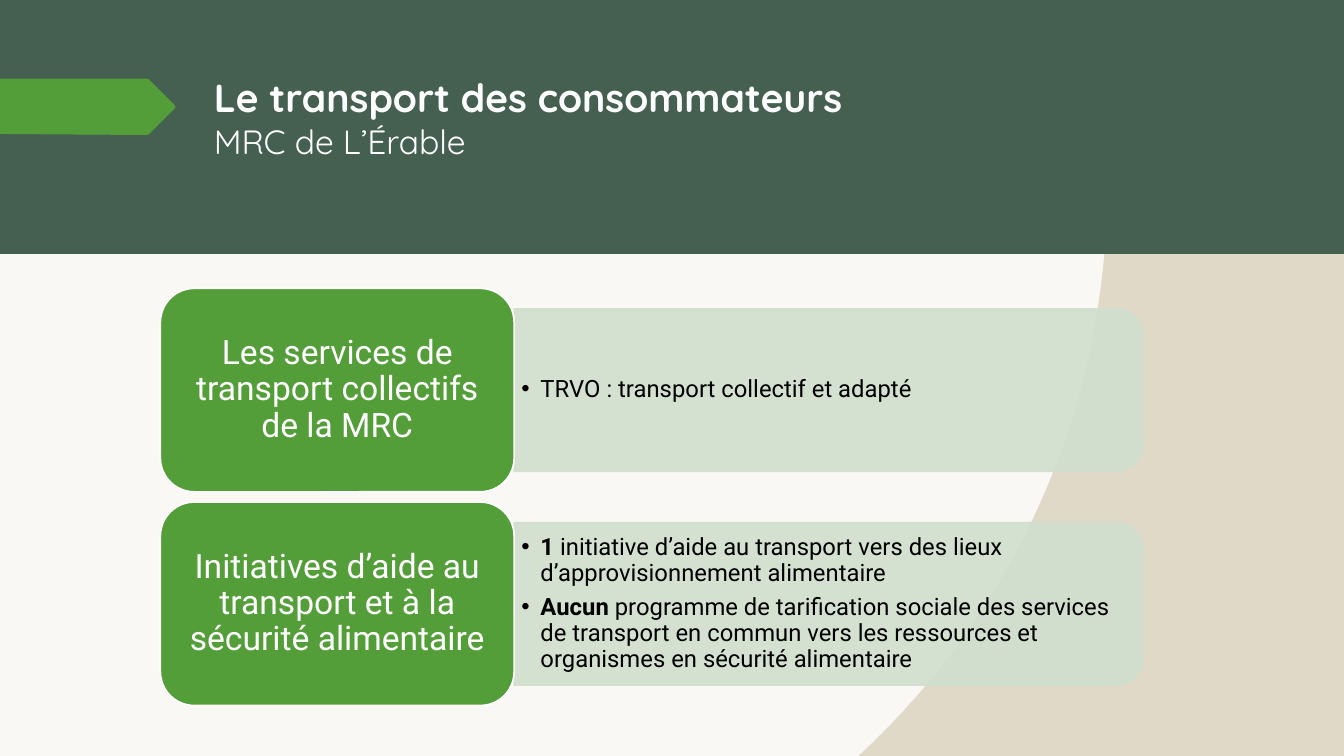
import math
from lxml import etree
from pptx import Presentation
from pptx.dml.color import RGBColor
from pptx.enum import shapes, text
from pptx.oxml.ns import qn
from pptx.util import Inches, Pt

# Content: each row is a label and its list; each item is (bold, plain)
TITLE = [("Le transport des consommateurs", 28, True), ("MRC de L’Érable", 24, False)]
ROWS = [
    ("Les services de transport collectifs de la MRC",
     [("", "TRVO : transport collectif et adapté")]),
    ("Initiatives d’aide au transport et à la sécurité alimentaire",
     [("1", " initiative d’aide au transport vers des lieux d’approvisionnement alimentaire"),
      ("Aucun", " programme de tarification sociale des services de transport en commun "
                "vers les ressources et organismes en sécurité alimentaire")]),
]
CREAM, TAN, DARK, GREEN, PALE = "F9F8F5", "E0D9C8", "455F51", "549E39", "D1DFCE"
WHITE, BLACK = "FFFFFF", "000000"

# Layout in inches
W, H = 13.33, 7.5
BAND = 2.52
LEFT, TOP, PITCH = 1.59, 2.86, 2.12
BOX_W, BOX_H = 3.51, 2.02
PANEL_W, PANEL_H, LIST_W, LIST_H = 6.24, 1.61, 6.16, 1.46


def color(code):
    return RGBColor.from_string(code)


def paint(shape, fill, line=None):
    shape.shadow.inherit = False
    shape.fill.solid()
    shape.fill.fore_color.rgb = color(fill)
    if line:
        shape.line.color.rgb = color(line)
        shape.line.width = Pt(1.25)
    else:
        shape.line.fill.background()
    return shape


def place(shape, x, y, w, h):
    shape.left, shape.top, shape.width, shape.height = map(Inches, (x, y, w, h))


def block(kind, x, y, w, h, fill, line=None):
    shape = slide.shapes.add_shape(kind, *map(Inches, (x, y, w, h)))
    return paint(shape, fill, line)


def outline(points, fill):
    first, *rest = [(Inches(x), Inches(y)) for x, y in points]
    pen = slide.shapes.build_freeform(*first)
    pen.add_line_segments(rest, close=True)
    return paint(pen.convert_to_shape(), fill)


def write(para, words, name, size, code, bold=False):
    run = para.add_run()
    run.text = words
    form = {"name": name, "size": Pt(size), "bold": bold}
    for key, value in form.items():
        setattr(run.font, key, value)
    run.font.color.rgb = color(code)


def setup(shape, anchor, **form):
    frame = shape.text_frame
    form = {"word_wrap": True, "auto_size": text.MSO_AUTO_SIZE.NONE,
            "vertical_anchor": anchor, **form}
    for key, value in form.items():
        setattr(frame, key, value)
    return frame


deck = Presentation()
deck.slide_width, deck.slide_height = Inches(W), Inches(H)
slide = deck.slides.add_slide(deck.slide_layouts[3])
tree = slide.shapes._spTree
title, *lists = list(slide.placeholders)

# Background: tan outside a circle centred a quarter of the way in
slide.background.fill.solid()
slide.background.fill.fore_color.rgb = color(CREAM)
cx, cy, radius = W / 4, H / 4, math.hypot(W, H) / 2
start, end = (math.asin((y - cy) / radius) for y in (BAND, H))
turns = [start + (end - start) * i / 60 for i in range(61)]
arc = [(cx + radius * math.cos(t), cy + radius * math.sin(t)) for t in turns]
outline(arc + [(W, H), (W, BAND)], TAN)

# Header band, title and arrow
block(shapes.MSO_SHAPE.RECTANGLE, 0, 0, W, BAND, DARK)
tree.append(title._element)
place(title, 2.02, 0.68, 10.26, 1.4)
para = setup(title, text.MSO_ANCHOR.TOP).paragraphs[0]
para.alignment = text.PP_ALIGN.LEFT
for i, (words, size, bold) in enumerate(TITLE):
    if i:
        para.add_line_break()
    write(para, words, "Quicksand", size, "FEFFFF", bold)
outline([(0, 0.78), (1.46, 0.78), (1.48, 0.79), (1.73, 1.04), (1.74, 1.06),
         (1.73, 1.08), (1.48, 1.33), (1.46, 1.34), (0, 1.33)], GREEN)

# Rows: pale panel turned a quarter, list on it, green label box
for i, ((label, items), body) in enumerate(zip(ROWS, lists)):
    x, y = LEFT + BOX_W, TOP + i * PITCH
    mid = y + BOX_H / 2
    panel = block(shapes.MSO_SHAPE.ROUND_2_SAME_RECTANGLE,
                  x + (PANEL_W - PANEL_H) / 2, mid - PANEL_W / 2,
                  PANEL_H, PANEL_W, PALE, PALE)
    panel.rotation = 90
    for tint in panel._element.spPr.iter(qn("a:srgbClr")):
        etree.SubElement(tint, qn("a:alpha"), val="90000")

    tree.append(body._element)
    place(body, x, mid - LIST_H / 2, LIST_W, LIST_H)
    frame = setup(body, text.MSO_ANCHOR.MIDDLE,
                  margin_left=Inches(0.07), margin_right=Inches(0.07),
                  margin_top=Inches(0.04), margin_bottom=Inches(0.04))
    for n, (bold, plain) in enumerate(items):
        para = frame.add_paragraph() if n else frame.paragraphs[0]
        para.line_spacing, para.space_before, para.space_after = 0.9, Pt(0), Pt(6)
        props = para._p.get_or_add_pPr()
        props.set("marL", str(Inches(0.19)))
        props.set("indent", str(-Inches(0.19)))
        etree.SubElement(props, qn("a:buChar"), char="•")
        if bold:
            write(para, bold, "Roboto", 17, BLACK, True)
        write(para, plain, "Roboto", 17, BLACK)

    box = block(shapes.MSO_SHAPE.ROUNDED_RECTANGLE, LEFT, y, BOX_W, BOX_H, GREEN, WHITE)
    para = setup(box, text.MSO_ANCHOR.MIDDLE).paragraphs[0]
    para.alignment, para.line_spacing = text.PP_ALIGN.CENTER, 0.9
    write(para, label, "Roboto", 24, WHITE)

deck.save("out.pptx")
